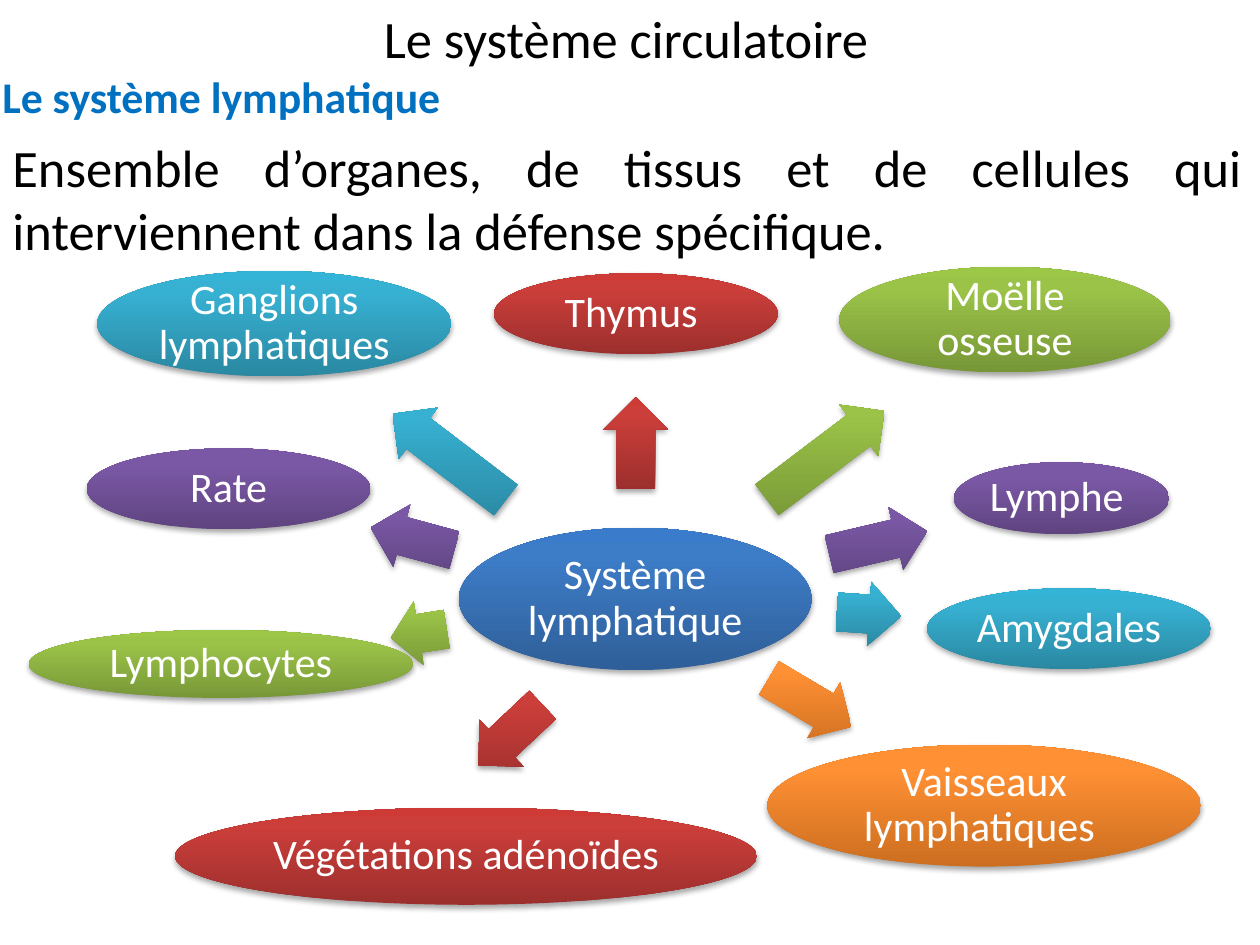
from copy import deepcopy
from dataclasses import dataclass
from typing import Any, NamedTuple

from lxml.etree import fromstring
from pptx import Presentation
from pptx.dml.color import RGBColor
from pptx.enum.shapes import MSO_SHAPE
from pptx.enum.text import MSO_ANCHOR, MSO_AUTO_SIZE, PP_ALIGN
from pptx.oxml.ns import qn
from pptx.util import Cm, Pt

BLACK = RGBColor(0x00, 0x00, 0x00)
WHITE = RGBColor(0xFF, 0xFF, 0xFF)
AZURE = RGBColor(0x00, 0x70, 0xC0)

SHADOW = (
    '<a:outerShdw xmlns:a="http://schemas.openxmlformats.org/drawingml/2006/main" '
    'blurRad="40000" dist="23000" dir="5400000" rotWithShape="0">'
    '<a:srgbClr val="000000"><a:alpha val="35000"/></a:srgbClr></a:outerShdw>'
)


class Tone(NamedTuple):
    dark: RGBColor
    mid: RGBColor
    light: RGBColor


BLUE = Tone(RGBColor(0x2F, 0x5F, 0x99), RGBColor(0x3D, 0x7C, 0xC7), RGBColor(0x3A, 0x7C, 0xCB))
RED = Tone(RGBColor(0x9C, 0x2F, 0x2D), RGBColor(0xCB, 0x3E, 0x3A), RGBColor(0xCE, 0x3B, 0x37))
GREEN = Tone(RGBColor(0x77, 0x97, 0x37), RGBColor(0x9B, 0xC3, 0x48), RGBColor(0x9D, 0xC7, 0x46))
PURPLE = Tone(RGBColor(0x5F, 0x44, 0x80), RGBColor(0x7B, 0x58, 0xA6), RGBColor(0x7C, 0x57, 0xA8))
TEAL = Tone(RGBColor(0x2A, 0x88, 0xA2), RGBColor(0x37, 0xB1, 0xD2), RGBColor(0x34, 0xB4, 0xD6))
ORANGE = Tone(RGBColor(0xCC, 0x6E, 0x20), RGBColor(0xFF, 0x90, 0x34), RGBColor(0xFF, 0x91, 0x36))


class Box(NamedTuple):
    left: float
    top: float
    width: float
    height: float


@dataclass
class Arrow:
    left: float
    top: float
    length: float
    angle: float


@dataclass
class Organ:
    name: str
    tone: Tone
    box: Box
    arrow: Arrow


@dataclass
class Label:
    text: str
    box: Box
    size: float
    color: RGBColor
    bold: bool
    align: PP_ALIGN
    anchor: MSO_ANCHOR
    wrap: bool


LABELS = [
    Label("Ensemble d’organes, de tissus et de cellules qui interviennent dans la défense spécifique.",
          Box(0, 2.59, 25.3, 2.82), 30, BLACK, False, PP_ALIGN.JUSTIFY, MSO_ANCHOR.TOP, True),
    Label("Le système circulatoire", Box(7.49, 0, 10.36, 1.55),
          30, BLACK, False, PP_ALIGN.LEFT, MSO_ANCHOR.TOP, False),
    Label("Le système lymphatique", Box(-0.2, 1.27, 10.21, 1.32),
          25, AZURE, True, PP_ALIGN.LEFT, MSO_ANCHOR.MIDDLE, True),
]

CORE = Box(9.25, 10.64, 7.11, 2.87)
ORGANS = [
    Organ("Thymus ", RED, Box(9.96, 5.51, 5.72, 1.63), Arrow(11.89, 8.28, 1.85, 270)),
    Organ("Moëlle osseuse", GREEN, Box(16.92, 5.38, 6.68, 2.13), Arrow(15.16, 8.53, 2.97, 322.9)),
    Organ("Lymphe ", PURPLE, Box(19.23, 9.32, 4.34, 1.45), Arrow(16.69, 10.29, 2.03, 346.8)),
    Organ("Amygdales", TEAL, Box(18.69, 11.86, 5.72, 1.63), Arrow(16.87, 11.73, 1.3, 3.9)),
    Organ("Vaisseaux lymphatiques ", ORANGE, Box(15.47, 15.01, 8.74, 2.46), Arrow(15.37, 13.51, 1.93, 30.6)),
    Organ("Végétations adénoïdes", RED, Box(3.53, 16.28, 11.73, 1.96), Arrow(9.4, 14.17, 1.78, 136.7)),
    Organ("Lymphocytes", GREEN, Box(0.58, 12.7, 7.75, 1.37), Arrow(7.87, 12.12, 1.14, 171)),
    Organ("Rate", PURPLE, Box(1.75, 9.04, 5.72, 1.63), Arrow(7.44, 10.21, 1.75, 195.2)),
    Organ("Ganglions lymphatiques", TEAL, Box(1.96, 5.46, 7.14, 2.13), Arrow(7.62, 8.56, 2.87, 217.3)),
]
GIRTH = 1.3
PAD = Cm(0.08)
INSET = {"margin_left": PAD, "margin_right": PAD, "margin_top": PAD, "margin_bottom": PAD,
         "word_wrap": True, "vertical_anchor": MSO_ANCHOR.MIDDLE}


def apply(item: Any, format: dict[str, Any]) -> None:
    for name, value in format.items():
        setattr(item, name, value)


def write(frame: Any, text: str, size: float, color: RGBColor, bold: bool, layout: dict[str, Any]) -> None:
    line = frame.paragraphs[0]
    apply(line, layout)
    run = line.add_run()
    run.text = text
    apply(run.font, {"name": "Calibri", "size": Pt(size), "bold": bold})
    run.font.color.rgb = color


def draw_form(slide: Any, kind: MSO_SHAPE, box: Box, tone: Tone) -> Any:
    form = slide.shapes.add_shape(kind, *map(Cm, box))
    form.line.fill.background()
    form.fill.gradient()
    form.fill.gradient_angle = 90
    props = form._element.spPr
    props.find(qn("a:gradFill")).set("rotWithShape", "0")
    stops = props.find(".//" + qn("a:gsLst"))
    stops.append(deepcopy(stops[-1]))
    for stop, place, color in zip(form.fill.gradient_stops, (0, 0.8, 1), tone):
        stop.position = place
        stop.color.rgb = color
    form.shadow.inherit = False
    props.find(qn("a:effectLst")).append(fromstring(SHADOW))
    return form


def draw_oval(slide: Any, text: str, box: Box, tone: Tone) -> None:
    oval = draw_form(slide, MSO_SHAPE.OVAL, box, tone)
    apply(oval.text_frame, INSET)
    write(oval.text_frame, text, 24, WHITE, False, {"alignment": PP_ALIGN.CENTER, "line_spacing": 0.9})


def draw_arrow(slide: Any, arrow: Arrow, tone: Tone) -> None:
    box = Box(arrow.left, arrow.top, arrow.length, GIRTH)
    form = draw_form(slide, MSO_SHAPE.RIGHT_ARROW, box, tone)
    form.adjustments[0] = 0.6
    form.adjustments[1] = 0.5
    form.rotation = arrow.angle


def draw_label(slide: Any, label: Label) -> None:
    frame = slide.shapes.add_textbox(*map(Cm, label.box)).text_frame
    apply(frame, {"word_wrap": label.wrap, "vertical_anchor": label.anchor,
                  "auto_size": MSO_AUTO_SIZE.SHAPE_TO_FIT_TEXT})
    write(frame, label.text, label.size, label.color, label.bold, {"alignment": label.align})


def main() -> None:
    deck = Presentation()
    apply(deck, {"slide_width": Cm(25.4), "slide_height": Cm(19.05)})
    slide = deck.slides.add_slide(deck.slide_layouts[6])
    for label in LABELS:
        draw_label(slide, label)
    draw_oval(slide, "Système lymphatique", CORE, BLUE)
    for organ in ORGANS:
        draw_arrow(slide, organ.arrow, organ.tone)
        draw_oval(slide, organ.name, organ.box, organ.tone)
    deck.save("out.pptx")


if __name__ == "__main__":
    main()
